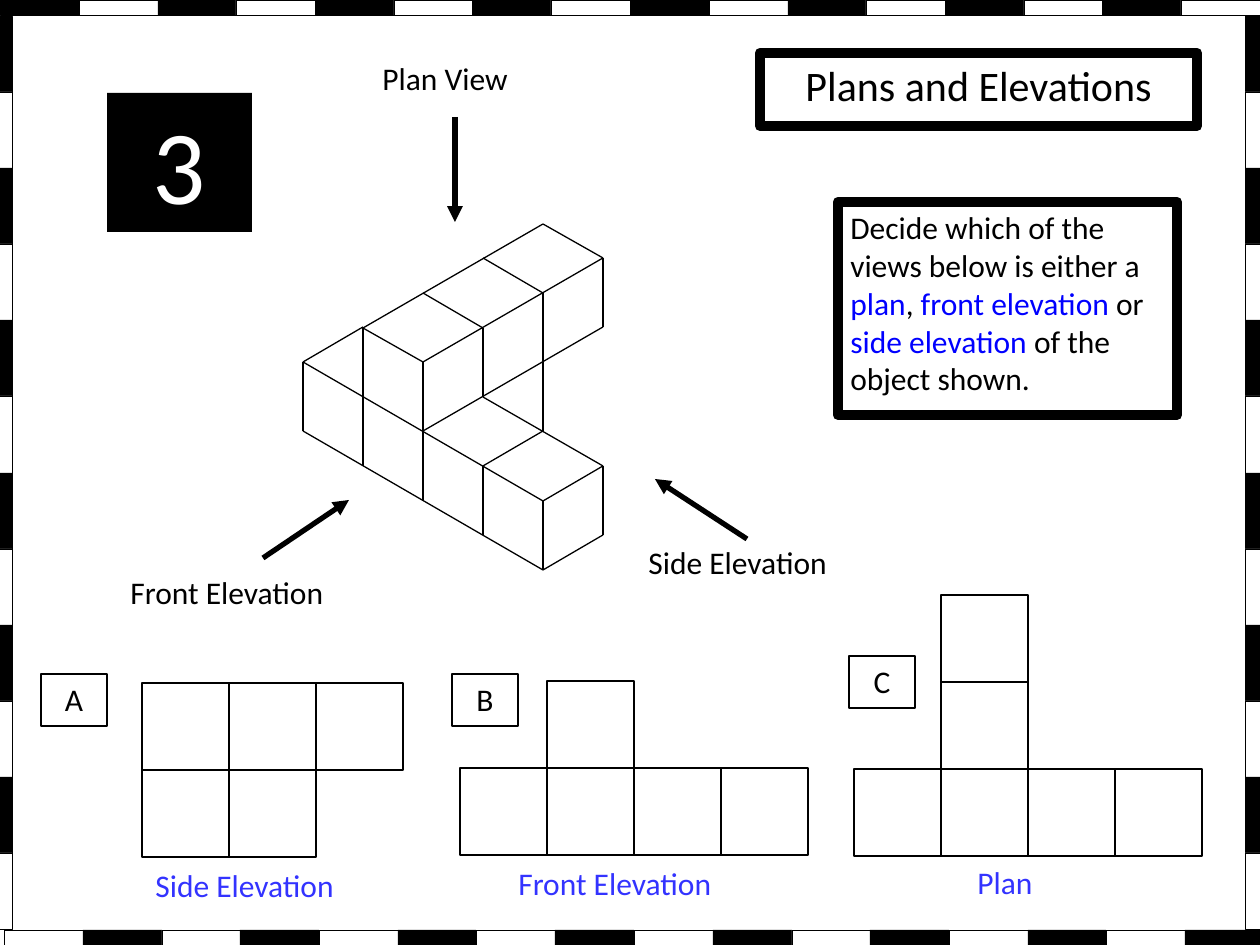
import pptx
import pptx.util
import pptx.dml.color
import pptx.enum.shapes
import pptx.enum.text
import pptx.oxml
import pptx.oxml.ns

COLORS = {"ink": "000000", "paper": "FFFFFF", "key": "0000FF", "reply": "3333FF"}
WIDE, HIGH = 1260, 945
CELL = 87
ALIGN = pptx.enum.text.PP_ALIGN

# Views: tag, tag place, grid origin, filled cells (column, row), answer, answer place
VIEWS = [
    ("A", (41, 674), (142, 683), [(0, 0), (1, 0), (2, 0), (0, 1), (1, 1)],
     "Side Elevation", (143, 860)),
    ("B", (452, 674), (460, 681), [(1, 0), (0, 1), (1, 1), (2, 1), (3, 1)],
     "Front Elevation", (506, 858)),
    ("C", (849, 656), (854, 595), [(1, 0), (1, 1), (0, 2), (1, 2), (2, 2), (3, 2)],
     "Plan", (965, 857)),
]

# Edges of the solid as lattice points: steps along front, along side, up
EDGES = [
    # Front face and foot
    ((0, 0, -1), (4, 0, -1)), ((0, 0, 0), (4, 0, 0)),
    ((0, 0, 0), (0, 0, -1)), ((1, 0, 1), (1, 0, -1)), ((2, 0, 1), (2, 0, -1)),
    ((3, 0, 0), (3, 0, -1)), ((4, 0, 0), (4, 0, -1)), ((4, 1, 0), (4, 1, -1)),
    ((4, 0, -1), (4, 1, -1)), ((4, 0, 0), (4, 1, 0)), ((3, 0, 0), (3, 1, 0)),
    ((2, 1, 0), (4, 1, 0)), ((0, 0, 0), (0, 1, 0)),
    # Upper row
    ((2, 0, 0), (2, 3, 0)), ((2, 0, 1), (2, 3, 1)), ((1, 0, 1), (1, 3, 1)),
    ((1, 0, 1), (2, 0, 1)), ((1, 1, 1), (2, 1, 1)), ((1, 2, 1), (2, 2, 1)),
    ((1, 3, 1), (2, 3, 1)), ((2, 1, 1), (2, 1, 0)), ((2, 2, 1), (2, 2, -1)),
    ((2, 3, 1), (2, 3, 0)),
]

# Viewing directions: label, label box, arrow start, arrow end
ARROWS = [
    ("Plan View", (370, 53, 176, 50), (455, 117), (455, 222)),
    ("Front Elevation", (118, 567, 246, 50), (263, 558), (349, 500)),
    ("Side Elevation", (636, 537, 246, 50), (747, 539), (655, 479)),
]


def px(n):
    return pptx.util.Emu(round(n * 914400 / 126))


def rgb(name):
    return pptx.dml.color.RGBColor.from_string(COLORS[name])


def write(shape, runs, size=18, align=ALIGN.LEFT):
    """Fill a shape with one paragraph of (text, colour) runs."""
    frame = shape.text_frame
    frame.word_wrap = True
    frame.vertical_anchor = pptx.enum.text.MSO_ANCHOR.TOP
    para = frame.paragraphs[0]
    para.alignment = align
    for text, color in runs:
        run = para.add_run()
        run.text = text
        style = {"name": "Calibri", "size": pptx.util.Pt(size)}
        for key, value in style.items():
            setattr(run.font, key, value)
        run.font.color.rgb = rgb(color)


def rect(slide, box, fill=None, line=0.75):
    kind = pptx.enum.shapes.MSO_SHAPE.RECTANGLE
    shape = slide.shapes.add_shape(kind, *map(px, box))
    shape.shadow.inherit = False
    if fill:
        shape.fill.solid()
        shape.fill.fore_color.rgb = rgb(fill)
    else:
        shape.fill.background()
    shape.line.color.rgb = rgb("ink")
    shape.line.width = pptx.util.Pt(line)
    return shape


def label(slide, box, text, color="ink"):
    write(slide.shapes.add_textbox(*map(px, box)), [(text, color)])


def line(slide, start, end, width=0.75, head=False):
    kind = pptx.enum.shapes.MSO_CONNECTOR.STRAIGHT
    link = slide.shapes.add_connector(kind, *map(px, start + end))
    link.line.color.rgb = rgb("ink")
    link.line.width = pptx.util.Pt(width)
    make = pptx.oxml.ns.qn
    if head:
        tip = link.line._get_or_add_ln().makeelement(make("a:tailEnd"), {"type": "triangle"})
        link.line._get_or_add_ln().append(tip)
    props = link._element.spPr
    props.append(props.makeelement(make("a:effectLst"), {}))


def spot(front, side, up):
    """Place a lattice point of the solid on the slide."""
    return (303 + 60 * (front + side), round(362 + 34.7 * (front - side) - 69 * up))


def border(slide):
    for i in range(16):
        left, right = round(i * WIDE / 16), round((i + 1) * WIDE / 16)
        fills = ("ink", "paper") if i % 2 == 0 else ("paper", "ink")
        rect(slide, (left, 0, right - left, 15), fills[0], 0.25)
        rect(slide, (left + 4, 930, right - left, 15), fills[1], 0.25)
    for i in range(12):
        top, foot = round(16 + i * 76.1), round(16 + (i + 1) * 76.1)
        for x in (-4, 1245):
            rect(slide, (x, top, 16, foot - top), "paper" if i % 2 else "ink", 0.25)


def view(slide, tag, place, origin, cells, reply, spot_at):
    for col, row in cells:
        rect(slide, (origin[0] + col * CELL, origin[1] + row * CELL, CELL, CELL))
    write(rect(slide, place + (66, 52)), [(tag, "ink")], align=ALIGN.CENTER)
    label(slide, spot_at + (250, 50), reply, "reply")


def main():
    deck = pptx.Presentation()
    deck.slide_width, deck.slide_height = px(WIDE), px(HIGH)
    slide = deck.slides.add_slide(deck.slide_layouts[6])

    # Solid and its viewing directions
    for start, end in EDGES:
        line(slide, spot(*start), spot(*end))
    for text, box, start, end in ARROWS:
        line(slide, start, end, 3, True)
        label(slide, box, text)

    # Title, number and task
    title = rect(slide, (760, 53, 437, 73), line=6)
    write(title, [("Plans and Elevations", "ink")], 24, ALIGN.CENTER)
    badge = rect(slide, (107, 93, 145, 139), "ink")
    badge.line.fill.background()
    write(badge, [("3", "paper")], 60, ALIGN.CENTER)
    write(rect(slide, (838, 202, 339, 213), line=6), [
        ("Decide which of the views below is either a ", "ink"), ("plan", "key"),
        (", ", "ink"), ("front elevation", "key"), (" or ", "ink"),
        ("side elevation", "key"), (" of the object shown.", "ink")])

    # Views and checkered border
    for item in VIEWS:
        view(slide, *item)
    border(slide)
    deck.save("out.pptx")


if __name__ == "__main__":
    main()
